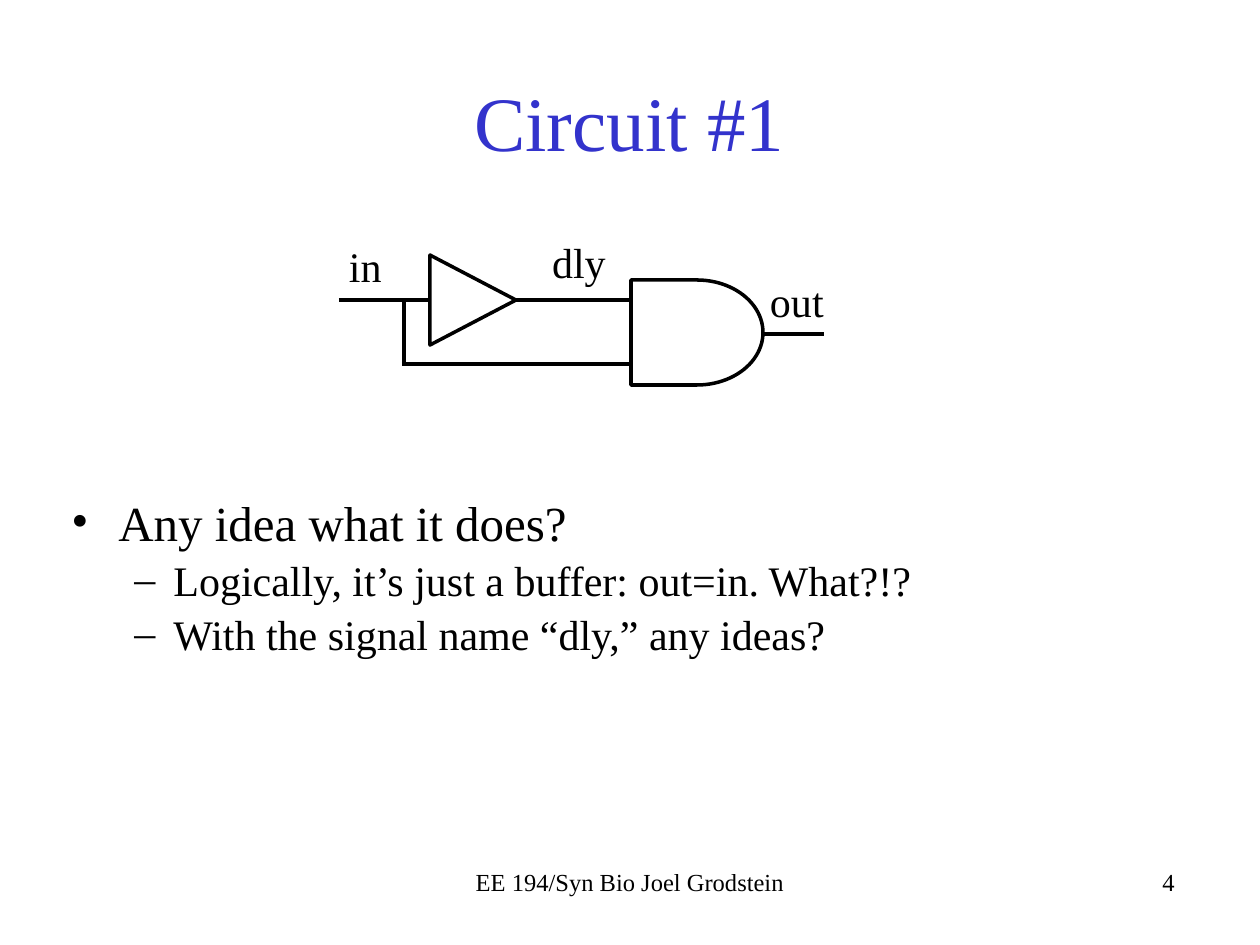
"""Build the "Circuit #1" slide: a delay buffer feeding an AND gate, with questions."""
from lxml import etree
from pptx import Presentation
from pptx.dml.color import RGBColor
from pptx.enum.shapes import MSO_CONNECTOR, MSO_SHAPE
from pptx.enum.text import MSO_ANCHOR, PP_ALIGN
from pptx.oxml.ns import qn
from pptx.util import Pt

BLACK = RGBColor(0x00, 0x00, 0x00)
WHITE = RGBColor(0xFF, 0xFF, 0xFF)
BLUE = RGBColor(0x33, 0x33, 0xCC)
LEFT, CENTER, RIGHT = PP_ALIGN.LEFT, PP_ALIGN.CENTER, PP_ALIGN.RIGHT
TOP, MIDDLE = MSO_ANCHOR.TOP, MSO_ANCHOR.MIDDLE
STRAIGHT = MSO_CONNECTOR.STRAIGHT
MERGE, DELAY = MSO_SHAPE.FLOWCHART_MERGE, MSO_SHAPE.FLOWCHART_DELAY
FONT = "Times New Roman"
SCALE = 914400 / 126


def px(*lengths):
    return [round(length * SCALE) for length in lengths]


def write(paragraph, text, size, color=BLACK, align=LEFT):
    paragraph.alignment = align
    run = paragraph.add_run()
    run.text = text
    for name, value in {"name": FONT, "size": Pt(size)}.items():
        setattr(run.font, name, value)
    run.font.color.rgb = color


presentation = Presentation()
presentation.slide_width, presentation.slide_height = px(1260, 945)
slide = presentation.slides.add_slide(presentation.slide_layouts[6])
shapes = slide.shapes

headings = [
    ("Circuit #1", (94, 42, 1071, 157), 44, BLUE, CENTER, MIDDLE),
    ("EE 194/Syn Bio Joel Grodstein", (430, 861, 400, 63), 14, BLACK, CENTER, TOP),
    ("4", (787, 861, 400, 63), 14, BLACK, RIGHT, TOP),
]
for text, box, size, color, align, anchor in headings:
    frame = shapes.add_textbox(*px(*box)).text_frame
    frame.word_wrap = True
    frame.vertical_anchor = anchor
    write(frame.paragraphs[0], text, size, color, align)

body = shapes.add_textbox(*px(59, 486, 1063, 186)).text_frame
body.word_wrap = True
points = [
    ("Any idea what it does?", 0, 28, "•", 47, 47, 4),
    ("Logically, it’s just a buffer: out=in. What?!?", 1, 24, "–", 102, 39, 2),
    ("With the signal name “dly,” any ideas?", 1, 24, "–", 102, 39, 2),
]
for index, (text, level, size, bullet, margin, hanging, space) in enumerate(points):
    paragraph = body.add_paragraph() if index else body.paragraphs[0]
    write(paragraph, text, size)
    paragraph.level = level
    paragraph.space_before = Pt(space)
    properties = paragraph._p.get_or_add_pPr()
    for name, length in zip(("marL", "indent"), px(margin, -hanging)):
        properties.set(name, str(length))
    etree.SubElement(properties, qn("a:buFont")).set("typeface", FONT)
    etree.SubElement(properties, qn("a:buChar")).set("char", bullet)

wires = [
    (339, 300, 659, 300),
    (402, 364, 649, 364),
    (404, 299, 404, 364),
    (824, 334, 721, 334),
]
for ends in wires:
    wire = shapes.add_connector(STRAIGHT, *px(*ends))
    wire.line.color.rgb = BLACK
    wire.line.width = Pt(2.25)
    etree.SubElement(wire._element.spPr, qn("a:effectLst"))

gates = [(MERGE, (428, 257, 90, 86), 270), (DELAY, (631, 280, 132, 105), 0)]
for kind, box, rotation in gates:
    gate = shapes.add_shape(kind, *px(*box))
    gate.rotation = rotation
    gate.shadow.inherit = False
    gate.fill.solid()
    gate.fill.fore_color.rgb = WHITE
    gate.line.color.rgb = BLACK
    gate.line.width = Pt(2)

signals = [
    ("in", (349, 241, 33, 50)),
    ("dly", (552, 237, 54, 50)),
    ("out", (770, 276, 54, 50)),
]
for text, box in signals:
    frame = shapes.add_textbox(*px(*box)).text_frame
    frame.word_wrap = False
    for side in ("left", "top", "right", "bottom"):
        setattr(frame, f"margin_{side}", 0)
    write(frame.paragraphs[0], text, 24)

presentation.save("out.pptx")
